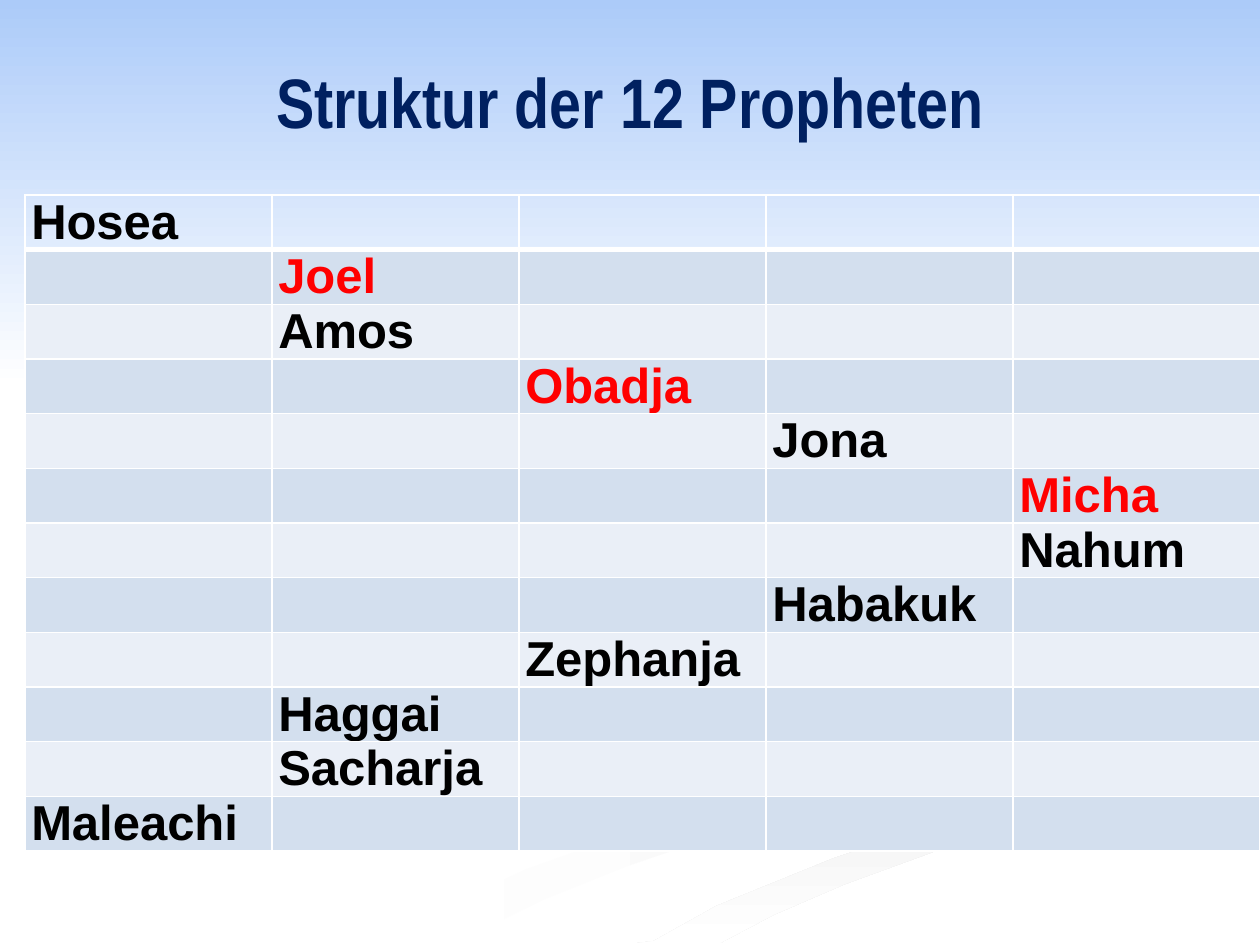
import pptx
import pptx.dml.color
import pptx.enum.shapes
import pptx.enum.text
import pptx.oxml
import pptx.oxml.ns
import pptx.util

Cm = pptx.util.Cm
Pt = pptx.util.Pt
RGBColor = pptx.dml.color.RGBColor

NAVY = RGBColor(0x00, 0x20, 0x60)
BLACK = RGBColor(0x00, 0x00, 0x00)
RED = RGBColor(0xFF, 0x00, 0x00)
WHITE = RGBColor(0xFF, 0xFF, 0xFF)
SKY = RGBColor(0xAC, 0xCB, 0xF9)
BAND_DARK = RGBColor(0xD3, 0xDF, 0xEE)
BAND_LIGHT = RGBColor(0xEA, 0xEF, 0xF7)
PALE_GREY = RGBColor(0xF5, 0xF5, 0xF5)
GREY = RGBColor(0xEA, 0xEA, 0xEA)

TITLE = "Struktur der 12 Propheten"
PROPHETS = [
    ("Hosea", 0, BLACK),
    ("Joel", 1, RED),
    ("Amos", 1, BLACK),
    ("Obadja", 2, RED),
    ("Jona", 3, BLACK),
    ("Micha", 4, RED),
    ("Nahum", 4, BLACK),
    ("Habakuk", 3, BLACK),
    ("Zephanja", 2, BLACK),
    ("Haggai", 1, BLACK),
    ("Sacharja", 1, BLACK),
    ("Maleachi", 0, BLACK),
]
COLUMNS = 5
COLUMN_WIDTH = Cm(4.98)
ROW_HEIGHT = Cm(1.1)

LEFT_SWOOSH = [
    (19.84, 14.05), (18.92, 13.67), (17.32, 13.18), (15.9, 12.75), (14.91, 12.22),
    (14.6, 11.66), (14.48, 11.99), (15.06, 12.47), (16.61, 13.03), (18.49, 13.59),
    (19.71, 14.05), (19.96, 14.38), (19.66, 14.81), (18.77, 15.19), (17.37, 15.57),
    (14.71, 16.23), (12.67, 16.79), (10.59, 17.53), (8.59, 18.47), (7.62, 19.02),
    (9.17, 19.02), (10.95, 18.14), (12.67, 17.45), (14.33, 16.89), (16.54, 16.26),
    (18.8, 15.7), (19.96, 15.27), (20.32, 14.76), (20.12, 14.25),
]
RIGHT_SWOOSH = [
    (13.18, 18.97), (12.78, 19.02), (14.5, 19.02), (15.6, 18.44), (17.02, 17.83),
    (19.1, 17.07), (21.87, 16.26), (25.35, 15.47), (25.35, 14.76), (24.13, 15.19),
    (22.02, 15.75), (19.41, 16.43), (16.81, 17.3), (14.45, 18.26),
]
SWOOSHES = [
    (LEFT_SWOOSH, WHITE, PALE_GREY, 0),
    (RIGHT_SWOOSH, GREY, WHITE, 270),
]


def paint_gradient(shape, start, end, angle):
    shape.shadow.inherit = False
    shape.line.fill.background()
    shape.fill.gradient()
    shape.fill.gradient_angle = angle
    for stop, color in zip(shape.fill.gradient_stops, (start, end)):
        stop.color.rgb = color


def add_swoosh(page, outline, start, end, angle):
    points = [(Cm(x), Cm(y)) for x, y in outline]
    builder = page.shapes.build_freeform(*points[0], scale=1.0)
    builder.add_line_segments(points[1:], close=True)
    paint_gradient(builder.convert_to_shape(), start, end, angle)


def add_text(para, text, font_name, size, color):
    span = para.add_run()
    span.text = text
    span.font.name = font_name
    span.font.size = Pt(size)
    span.font.bold = True
    span.font.color.rgb = color


def add_border(cell, side, width):
    cell._tc.get_or_add_tcPr().append(pptx.oxml.parse_xml(
        f'<a:ln{side} {pptx.oxml.ns.nsdecls("a")} w="{Pt(width)}">'
        f'<a:solidFill><a:srgbClr val="{WHITE}"/></a:solidFill></a:ln{side}>'
    ))


def format_cell(cell, row):
    cell.margin_left = cell.margin_right = Cm(0.13)
    cell.margin_top = cell.margin_bottom = 0
    widths = {"L": 1, "R": 1, "T": 3 if row == 1 else 1, "B": 3 if row == 0 else 1}
    for side, width in widths.items():
        add_border(cell, side, width)
    if row == 0:
        cell.fill.background()
    else:
        cell.fill.solid()
        cell.fill.fore_color.rgb = BAND_DARK if row % 2 else BAND_LIGHT


def add_prophets(page):
    frame = page.shapes.add_table(
        len(PROPHETS), COLUMNS, Cm(0.5), Cm(3.93),
        COLUMN_WIDTH * COLUMNS, ROW_HEIGHT * len(PROPHETS),
    )
    table = frame.table
    table.first_row = table.horz_banding = False
    for column in table.columns:
        column.width = COLUMN_WIDTH
    for row, (name, place, color) in enumerate(PROPHETS):
        table.rows[row].height = ROW_HEIGHT
        for column in range(COLUMNS):
            format_cell(table.cell(row, column), row)
        para = table.cell(row, place).text_frame.paragraphs[0]
        add_text(para, name, "Arial", 28, color)


def add_title(page):
    box = page.shapes.title
    page.shapes._spTree.append(box._element)
    box.left, box.top, box.width, box.height = Cm(0.5), Cm(0.53), Cm(24.4), Cm(3)
    box.text_frame.vertical_anchor = pptx.enum.text.MSO_ANCHOR.MIDDLE
    para = box.text_frame.paragraphs[0]
    para.alignment = pptx.enum.text.PP_ALIGN.CENTER
    add_text(para, TITLE, "Arial Narrow", 40, NAVY)


def main():
    deck = pptx.Presentation()
    deck.slide_width, deck.slide_height = Cm(25.4), Cm(19.05)
    page = deck.slides.add_slide(deck.slide_layouts[5])
    page.background.fill.solid()
    page.background.fill.fore_color.rgb = WHITE
    for swoosh in SWOOSHES:
        add_swoosh(page, *swoosh)
    sky = page.shapes.add_shape(
        pptx.enum.shapes.MSO_SHAPE.RECTANGLE, 0, 0, deck.slide_width, Cm(7.82)
    )
    paint_gradient(sky, SKY, WHITE, 270)
    add_title(page)
    add_prophets(page)
    deck.save("out.pptx")


if __name__ == "__main__":
    main()
